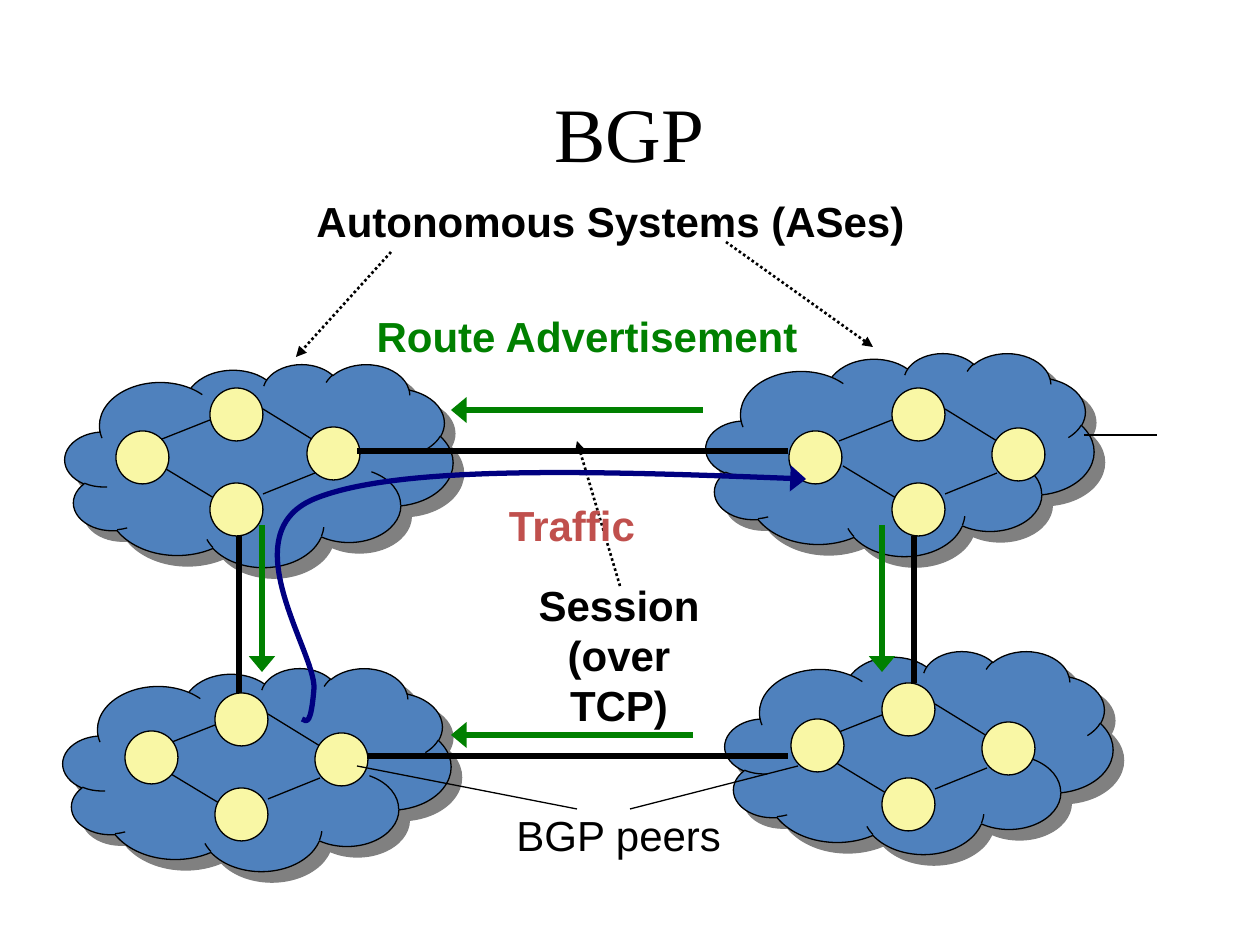
import pptx
import pptx.util
import pptx.dml.color
import pptx.enum.dml
import pptx.enum.shapes
import pptx.enum.text
import pptx.oxml
import pptx.oxml.ns
from lxml import etree

SCALE = 914400 / 126
QN = pptx.oxml.ns.qn
NS = pptx.oxml.ns.nsdecls("a")
SHAPE = pptx.enum.shapes.MSO_SHAPE
ALIGN = pptx.enum.text.PP_ALIGN
DOT = pptx.enum.dml.MSO_LINE.ROUND_DOT
BLACK, GREEN, NAVY = "000000", "008000", "000080"
DISC = 53

# cloud corner, north router corner, then west and east offsets from north
SYSTEMS = [
    ((706, 353), (892, 388), (-103, 43), (100, 40)),
    ((65, 364), (210, 388), (-94, 43), (97, 39)),
    ((725, 651), (882, 683), (-91, 36), (100, 39)),
    ((63, 668), (215, 693), (-90, 38), (100, 40)),
]
SOUTH = (0, 95)
# link ends as offsets from the north router corner
LINKS = [(-53, 53, 0, 32), (53, 106, 105, 85),
         (-49, 78, 4, 110), (53, 21, 105, 53)]
SESSIONS = [(788, 451, 357, 451), (368, 756, 788, 756),
            (239, 536, 239, 693), (914, 536, 914, 683)]
ADVERTS = [(703, 410, 451, 410), (693, 735, 451, 735),
           (262, 525, 262, 672), (882, 525, 882, 672)]
POINTERS = [(391, 252, 296, 357), (726, 242, 873, 347),
            (620, 586, 577, 441)]
LEADERS = [(1084, 435, 1157, 435), (357, 766, 577, 809),
           (798, 766, 630, 809)]
TRAFFIC = [(302, 719), (307, 722), (311, 725), (314, 688), (315, 651),
           (231, 534), (314, 499), (396, 465), (601, 471), (806, 479)]
BOLD = {"size": pptx.util.Pt(24), "name": "Arial", "bold": True}
PLAIN = {**BOLD, "bold": False}
TITLE = {"size": pptx.util.Pt(44), "name": "Times New Roman", "bold": False}
LABELS = [
    ("Route Advertisement", (363, 304, 448, 63), GREEN, BOLD, ALIGN.CENTER),
    ("Autonomous Systems (ASes)", (296, 189, 629, 63), BLACK, BOLD,
     ALIGN.CENTER),
    ("Session (over TCP)", (514, 573, 210, 164), BLACK, BOLD, ALIGN.CENTER),
    ("Traffic", (451, 493, 242, 63), "C0504D", BOLD, ALIGN.CENTER),
    ("BGP peers", (504, 803, 231, 63), BLACK, PLAIN, ALIGN.LEFT),
]


def px(*vals):
    return [round(v * SCALE) for v in vals]


def rgb(code):
    return pptx.dml.color.RGBColor.from_string(code)


def apply(item, look):
    for key, val in look.items():
        setattr(item, key, val)


def stroke(item, color, width, tip=None):
    """Set line colour and width; tip is the arrowhead's breadth, if any."""
    item.line.color.rgb = rgb(color)
    item.line.width = pptx.util.Pt(width)
    if tip:
        etree.SubElement(item.line._get_or_add_ln(), QN("a:tailEnd"),
                         type="triangle", w=tip, len="med")


def line(slide, ends, color, width, tip=None, dash=None):
    kind = pptx.enum.shapes.MSO_CONNECTOR.STRAIGHT
    item = slide.shapes.add_connector(kind, *px(*ends))
    if dash:
        item.line.dash_style = dash
    stroke(item, color, width, tip)
    etree.SubElement(item._element.spPr, QN("a:effectLst"))


def solid(slide, kind, box, fill):
    item = slide.shapes.add_shape(kind, *px(*box))
    item.shadow.inherit = False
    item.fill.solid()
    item.fill.fore_color.rgb = rgb(fill)
    stroke(item, BLACK, 0.75)
    return item


def cloud(slide, x, y):
    item = solid(slide, SHAPE.CLOUD, (x, y, 388, 203), "4F81BD")
    shade = pptx.oxml.parse_xml(
        f'<a:outerShdw {NS} dist="107763" dir="2700000" algn="ctr" '
        'rotWithShape="0"><a:srgbClr val="808080"/></a:outerShdw>')
    item._element.spPr.find(QN("a:effectLst")).append(shade)


def system(slide, spot, north, west, east):
    """Draw one autonomous system: cloud, links and four routers."""
    cloud(slide, *spot)
    x, y = north
    for a, b, c, d in LINKS:
        line(slide, (x + a, y + b, x + c, y + d), BLACK, 0.75)
    for a, b in ((0, 0), SOUTH, west, east):
        solid(slide, SHAPE.OVAL, (x + a, y + b, DISC, DISC), "F9F7A5")


def curve(slide, spots, color, width):
    """Draw cubic curves: a start, then three control points for each."""
    build = slide.shapes.build_freeform(*px(*spots[0]))
    build.add_line_segments([px(*s) for s in spots[1:]], close=False)
    item = build.convert_to_shape()
    item.shadow.inherit = False
    item.fill.background()
    stroke(item, color, width, tip="lg")
    steps = list(item._element.iter(QN("a:lnTo")))
    for i in range(0, len(steps), 3):
        bend = etree.SubElement(steps[i].getparent(), QN("a:cubicBezTo"))
        for step in steps[i:i + 3]:
            bend.append(step[0])
            step.getparent().remove(step)


def write(frame, text, color, font, align=ALIGN.CENTER):
    part = frame.paragraphs[0]
    part.alignment = align
    run = part.add_run()
    run.text = text
    apply(run.font, font)
    run.font.color.rgb = rgb(color)


def label(slide, text, box, color, font, align):
    frame = slide.shapes.add_textbox(*px(*box)).text_frame
    frame.word_wrap = True
    write(frame, text, color, font, align)


def head(slide, text):
    item = slide.shapes.title
    spot = px(94, 53, 1071, 158)
    apply(item, dict(zip(("left", "top", "width", "height"), spot)))
    item.text_frame.vertical_anchor = pptx.enum.text.MSO_ANCHOR.MIDDLE
    write(item.text_frame, text, BLACK, TITLE)


def main():
    deck = pptx.Presentation()
    deck.slide_width, deck.slide_height = px(1260, 945)
    slide = deck.slides.add_slide(deck.slide_layouts[5])
    head(slide, "BGP")
    for parts in SYSTEMS:
        system(slide, *parts)
    for ends in POINTERS:
        line(slide, ends, BLACK, 1.5, tip="med", dash=DOT)
    for ends in SESSIONS:
        line(slide, ends, BLACK, 3)
    for ends in ADVERTS:
        line(slide, ends, GREEN, 3, tip="lg")
    curve(slide, TRAFFIC, NAVY, 3)
    for ends in LEADERS:
        line(slide, ends, BLACK, 0.75)
    for parts in LABELS:
        label(slide, *parts)
    deck.save("out.pptx")


if __name__ == "__main__":
    main()
